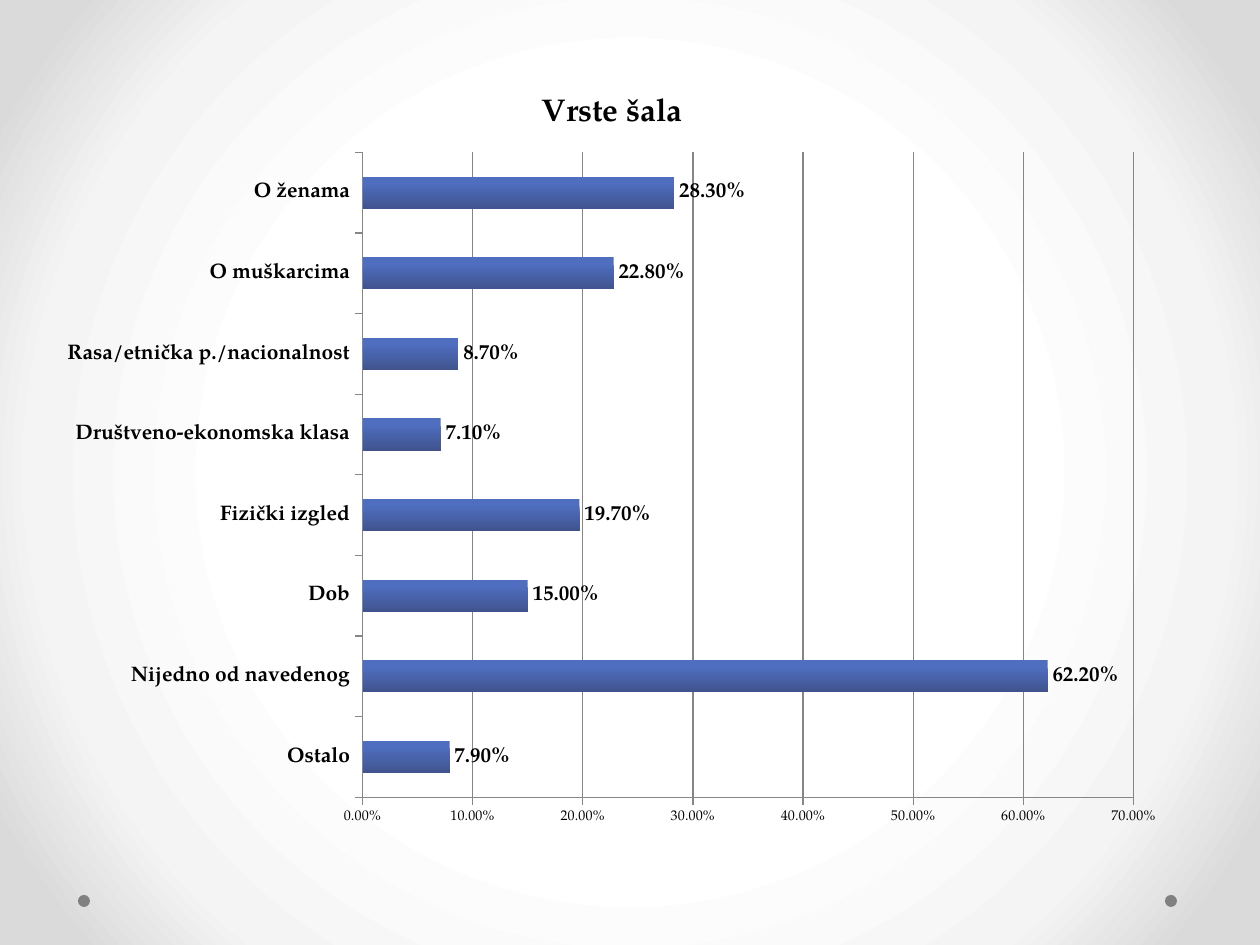
import dataclasses

import lxml.etree
import pptx
import pptx.chart.data
import pptx.dml.color
import pptx.enum.chart
import pptx.enum.shapes
import pptx.oxml
import pptx.oxml.ns
import pptx.util

EMU_PER_PX = 914400 / 126
FONT = "TeX Gyre Pagella"
COLORS = {
    "text": "000000",
    "dot": "808080",
    "axis": "868686",
    "bar_top": "4F6EC0",
    "bar_bottom": "40538D",
    "center": "FFFFFF",
    "ring": "F4F4F4",
    "edge": "DADADA",
}


@dataclasses.dataclass(frozen=True)
class Dot:
    left: int
    top: int
    size: int = 12


@dataclasses.dataclass(frozen=True)
class JokeType:
    name: str
    share: float


DOTS = [Dot(78, 895), Dot(1165, 895)]
JOKE_TYPES = [
    JokeType("Ostalo", 0.079),
    JokeType("Nijedno od navedenog", 0.622),
    JokeType("Dob", 0.15),
    JokeType("Fizički izgled", 0.197),
    JokeType("Društveno-ekonomska klasa", 0.071),
    JokeType("Rasa/etnička p./nacionalnost", 0.087),
    JokeType("O muškarcima", 0.228),
    JokeType("O ženama", 0.283),
]


def px(length: int) -> pptx.util.Emu:
    return pptx.util.Emu(round(length * EMU_PER_PX))


def color(name: str) -> pptx.dml.color.RGBColor:
    return pptx.dml.color.RGBColor.from_string(COLORS[name])


def style_font(font, size: int = 10, bold: bool = False) -> None:
    font.name = FONT
    font.size = pptx.util.Pt(size)
    font.bold = bold
    font.color.rgb = color("text")


def write_text(frame, text: str, **font_format) -> None:
    span = frame.paragraphs[0].add_run()
    span.text = text
    style_font(span.font, **font_format)


def paint_background(page) -> None:
    page.background.fill.gradient()
    gradient = page.element.find(".//" + pptx.oxml.ns.qn("a:gradFill"))
    stops = "".join(
        f'<a:gs pos="{percent * 1000}"><a:srgbClr val="{COLORS[name]}"/></a:gs>'
        for percent, name in [(50, "center"), (76, "ring"), (92, "edge")]
    )
    radial = pptx.oxml.parse_xml(
        f'<a:gradFill {pptx.oxml.ns.nsdecls("a")} rotWithShape="1">'
        f"<a:gsLst>{stops}</a:gsLst>"
        '<a:path path="circle">'
        '<a:fillToRect l="50000" t="50000" r="50000" b="50000"/>'
        "</a:path></a:gradFill>"
    )
    gradient.getparent().replace(gradient, radial)


def draw_dot(page, dot: Dot) -> None:
    shape = page.shapes.add_shape(
        pptx.enum.shapes.MSO_SHAPE.OVAL,
        px(dot.left), px(dot.top), px(dot.size), px(dot.size),
    )
    shape.shadow.inherit = False
    shape.fill.solid()
    shape.fill.fore_color.rgb = color("dot")
    shape.line.fill.background()


def style_axis(axis, **font_format) -> None:
    axis.major_tick_mark = pptx.enum.chart.XL_TICK_MARK.OUTSIDE
    axis.minor_tick_mark = pptx.enum.chart.XL_TICK_MARK.NONE
    axis.format.line.color.rgb = color("axis")
    style_font(axis.tick_labels.font, **font_format)


def place_plot(chart, **fractions: float) -> None:
    area = chart.element.find(".//" + pptx.oxml.ns.qn("c:plotArea"))
    for old in area.findall(pptx.oxml.ns.qn("c:layout")):
        area.remove(old)
    layout = lxml.etree.Element(pptx.oxml.ns.qn("c:layout"))
    manual = lxml.etree.SubElement(layout, pptx.oxml.ns.qn("c:manualLayout"))
    settings = {"layoutTarget": "inner", "xMode": "edge", "yMode": "edge", **fractions}
    for tag, value in settings.items():
        lxml.etree.SubElement(manual, pptx.oxml.ns.qn(f"c:{tag}"), val=str(value))
    area.insert(0, layout)


def draw_chart(page, joke_types: list[JokeType]) -> None:
    data = pptx.chart.data.CategoryChartData(number_format="0.00%")
    data.categories = [joke.name for joke in joke_types]
    data.add_series("Series 1", [joke.share for joke in joke_types])
    chart = page.shapes.add_chart(
        pptx.enum.chart.XL_CHART_TYPE.BAR_CLUSTERED,
        px(45), px(67), px(1134), px(777), data,
    ).chart
    style_font(chart.font)
    chart.has_legend = False
    chart.has_title = True
    write_text(chart.chart_title.text_frame, "Vrste šala", size=18, bold=True)
    chart.chart_title.include_in_layout = False
    place_plot(chart, x=0.28, y=0.11, w=0.68, h=0.83)

    style_axis(chart.category_axis, size=12, bold=True)
    values = chart.value_axis
    style_axis(values, size=8)
    values.minimum_scale, values.maximum_scale, values.major_unit = 0, 0.7, 0.1
    values.tick_labels.number_format = "0.00%"
    values.tick_labels.number_format_is_linked = False
    values.has_major_gridlines = True
    values.major_gridlines.format.line.color.rgb = color("axis")

    plot = chart.plots[0]
    plot.gap_width = 150
    plot.vary_by_categories = False
    plot.has_data_labels = True
    labels = plot.data_labels
    labels.show_value = True
    labels.number_format = "0.00%"
    labels.number_format_is_linked = False
    labels.position = pptx.enum.chart.XL_LABEL_POSITION.OUTSIDE_END
    style_font(labels.font, size=12, bold=True)

    fill = plot.series[0].format.fill
    fill.gradient()
    fill.gradient_angle = 270
    for stop, position, name in zip(fill.gradient_stops, (0.2, 1), ("bar_top", "bar_bottom")):
        stop.position = position
        stop.color.rgb = color(name)


def main() -> None:
    deck = pptx.Presentation()
    deck.slide_width, deck.slide_height = px(1260), px(945)
    page = deck.slides.add_slide(deck.slide_layouts[6])
    paint_background(page)
    for dot in DOTS:
        draw_dot(page, dot)
    draw_chart(page, JOKE_TYPES)
    deck.save("out.pptx")


if __name__ == "__main__":
    main()
